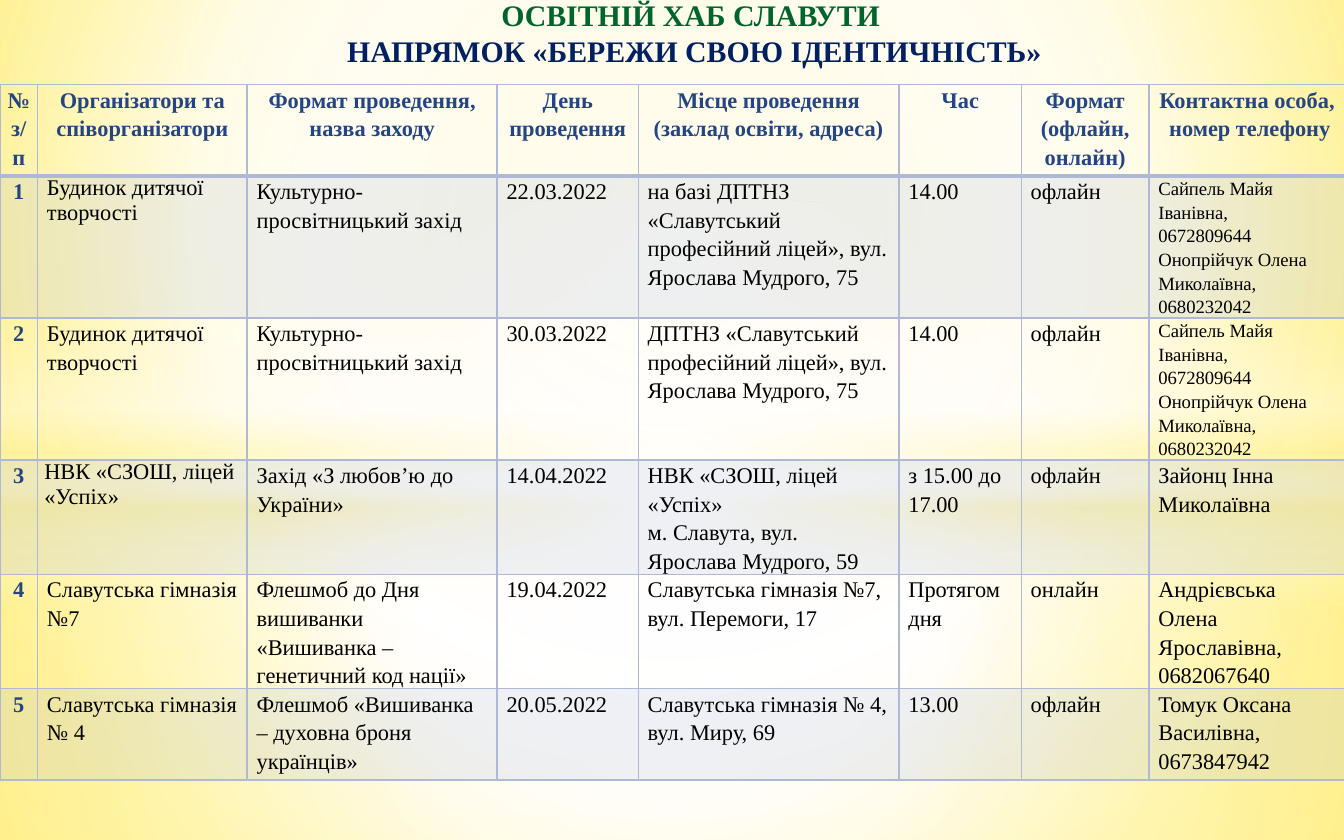
from dataclasses import dataclass
from typing import Any

from lxml.etree import SubElement
from pptx import Presentation
from pptx.dml.color import RGBColor
from pptx.enum.shapes import MSO_SHAPE
from pptx.enum.text import MSO_ANCHOR, MSO_AUTO_SIZE, PP_ALIGN
from pptx.oxml.ns import qn
from pptx.util import Inches, Pt


@dataclass(frozen=True)
class Theme:
    font: str = "Times New Roman"
    green: str = "00642D"
    navy: str = "002060"
    blue: str = "244583"
    black: str = "000000"
    line: str = "AEBAD5"
    white: str = "FFFFFF"
    cream: str = "FFF39D"
    head: int = 16
    text: int = 12
    small: int = 10


THEME = Theme()


@dataclass(frozen=True)
class Stop:
    at: int
    tone: str
    alpha: int = 100


@dataclass(frozen=True)
class Glow:
    kind: Any
    top: float
    height: float
    stops: tuple
    focus: tuple = (50, 50, 50, 50)


@dataclass(frozen=True)
class Look:
    size: int = THEME.text
    tone: str = THEME.black
    bold: bool = False
    align: Any = PP_ALIGN.LEFT
    inset: float = 0.07
    space: float = 1.15


HEAD = Look(tone=THEME.blue, bold=True, align=PP_ALIGN.CENTER, inset=0.05)
BODY = Look()
TIGHT = Look(space=1.0)
NARROW = Look(space=1.0, inset=0.05)
SMALL = Look(size=THEME.small)
SPECIAL = {(1, 1): TIGHT, (3, 1): NARROW, (1, 7): SMALL, (2, 7): SMALL}

BACK = (Stop(0, "FFF18D"), Stop(60, THEME.white), Stop(100, "FFE94E"))
GLOWS = (
    Glow(MSO_SHAPE.RECTANGLE, 3.52, 2.73, (
        Stop(0, THEME.white, 91), Stop(37, THEME.white, 76), Stop(100, THEME.cream, 79))),
    Glow(MSO_SHAPE.RECTANGLE, 0, 3.52, (
        Stop(0, THEME.white, 89), Stop(48, THEME.white, 62), Stop(100, THEME.cream, 79))),
    Glow(MSO_SHAPE.RECTANGLE, 2.42, 2.08, (
        Stop(0, THEME.white, 0), Stop(29, THEME.white, 30), Stop(45, THEME.cream, 40),
        Stop(55, THEME.white, 26), Stop(65, THEME.cream, 60), Stop(100, THEME.white, 0)), ()),
    Glow(MSO_SHAPE.OVAL, 1.46, 4.65, (Stop(0, THEME.white), Stop(54, THEME.white, 0))),
)

WIDTHS = (0.28, 1.56, 1.86, 1.05, 1.94, 0.91, 0.95, 1.46)
CLUB = "Будинок дитячої творчості"
EVENT = "Культурно-просвітницький захід"
HOSTS = "Сайпель Майя Іванівна,\n0672809644 Онопрійчук Олена Миколаївна,\n0680232042"
ROWS = (
    ("№\nз/п", "Організатори та співорганізатори", "Формат проведення, назва заходу",
     "День проведення", "Місце проведення\n(заклад освіти, адреса)", "Час",
     "Формат\n(офлайн, онлайн)", "Контактна особа,\n номер телефону"),
    ("1", CLUB, EVENT, "22.03.2022",
     "на базі ДПТНЗ «Славутський професійний ліцей», вул. Ярослава Мудрого, 75",
     "14.00", "офлайн", HOSTS),
    ("2", CLUB, EVENT, "30.03.2022",
     "ДПТНЗ «Славутський професійний ліцей», вул. Ярослава Мудрого, 75",
     "14.00", "офлайн", HOSTS),
    ("3", "НВК «СЗОШ, ліцей «Успіх»", "Захід «З любов’ю до України»", "14.04.2022",
     "НВК «СЗОШ, ліцей «Успіх»\nм. Славута, вул. Ярослава Мудрого, 59",
     "з 15.00 до 17.00", "офлайн", "Зайонц Інна Миколаївна"),
    ("4", "Славутська гімназія №7",
     "Флешмоб до Дня вишиванки «Вишиванка – генетичний код нації»", "19.04.2022",
     "Славутська гімназія №7, вул. Перемоги, 17", "Протягом дня", "онлайн",
     "Андрієвська Олена Ярославівна, 0682067640"),
    ("5", "Славутська гімназія № 4", "Флешмоб «Вишиванка – духовна броня українців»",
     "20.05.2022", "Славутська гімназія № 4, вул. Миру, 69", "13.00", "офлайн",
     "Томук Оксана Василівна, 0673847942"),
)


def apply(item: Any, values: dict) -> None:
    """Set each named value on the item."""
    for name, value in values.items():
        setattr(item, name, value)


def blend(box: Any, stops: tuple, focus: tuple) -> None:
    """Swap the solid fill in a box for a gradient, linear if it has no focus."""
    old = box.find(qn("a:solidFill"))
    grad = old.makeelement(qn("a:gradFill"), {"rotWithShape": "1"})
    box.replace(old, grad)
    group = SubElement(grad, qn("a:gsLst"))
    for stop in stops:
        mark = SubElement(group, qn("a:gs"), pos=str(stop.at * 1000))
        tone = SubElement(mark, qn("a:srgbClr"), val=stop.tone)
        SubElement(tone, qn("a:alpha"), val=str(stop.alpha * 1000))
    if focus:
        way = SubElement(grad, qn("a:path"), path="circle")
        sides = {side: str(part * 1000) for side, part in zip("ltrb", focus)}
        SubElement(way, qn("a:fillToRect"), sides)
    else:
        SubElement(grad, qn("a:lin"), ang="5400000", scaled="0")


def paint(slide: Any, glow: Glow) -> None:
    """Draw one glow across the slide."""
    shape = slide.shapes.add_shape(
        glow.kind, 0, Inches(glow.top), Inches(10), Inches(glow.height))
    shape.shadow.inherit = False
    shape.line.fill.background()
    shape.fill.solid()
    blend(shape.element.spPr, glow.stops, glow.focus)


def format_font(font: Any, size: int, tone: str, bold: bool) -> None:
    """Set the face, size, weight and colour of a font."""
    apply(font, {"name": THEME.font, "size": Pt(size), "bold": bold})
    font.color.rgb = RGBColor.from_string(tone)


def edge(cell: Any, row: int) -> None:
    """Rule the four sides of a cell, thicker under the header."""
    props = cell._tc.get_or_add_tcPr()
    for side in "LRTB":
        thick = (row, side) in ((0, "B"), (1, "T"))
        rule = SubElement(props, qn(f"a:ln{side}"), w=str(Pt(2 if thick else 1)))
        fill = SubElement(rule, qn("a:solidFill"))
        SubElement(fill, qn("a:srgbClr"), val=THEME.line)


def tint(cell: Any, row: int) -> None:
    """Shade the odd rows and leave the rest clear."""
    if row % 2 == 0:
        cell.fill.background()
        return
    cell.fill.solid()
    cell.fill.fore_color.rgb = RGBColor.from_string(THEME.line)
    tone = cell._tc.tcPr.find(qn("a:solidFill"))[0]
    SubElement(tone, qn("a:alpha"), val="20000")


def write(cell: Any, text: str, look: Look) -> None:
    """Fill a cell with text in the given look."""
    side = Inches(look.inset)
    apply(cell, {"text": text, "margin_left": side, "margin_right": side,
                 "margin_top": 0, "margin_bottom": 0})
    for para in cell.text_frame.paragraphs:
        apply(para, {"alignment": look.align, "line_spacing": look.space})
        for run in para.runs:
            format_font(run.font, look.size, look.tone, look.bold)


def add_plan(slide: Any) -> None:
    """Build the table of events."""
    frame = slide.shapes.add_table(len(ROWS), len(WIDTHS), 0, Inches(0.63),
                                   Inches(10), Inches(0.68 * len(ROWS)))
    table = frame.table
    apply(table, {"first_row": False, "horz_banding": False})
    for col, width in zip(table.columns, WIDTHS):
        col.width = Inches(width)
    for row, texts in enumerate(ROWS):
        for col, text in enumerate(texts):
            cell = table.cell(row, col)
            base = HEAD if row == 0 or col == 0 else BODY
            write(cell, text, SPECIAL.get((row, col), base))
            edge(cell, row)
            tint(cell, row)


def add_title(slide: Any) -> None:
    """Set the two-line title on top of the other shapes."""
    title = slide.shapes.title
    apply(title, {"left": Inches(0.28), "top": Inches(-0.26),
                  "width": Inches(9.72), "height": Inches(0.84)})
    frame = title.text_frame
    frame.text = "ОСВІТНІЙ ХАБ СЛАВУТИ\n НАПРЯМОК «БЕРЕЖИ СВОЮ ІДЕНТИЧНІСТЬ»"
    apply(frame, {"word_wrap": True, "auto_size": MSO_AUTO_SIZE.NONE, "margin_top": 0,
                  "margin_bottom": Inches(0.07), "vertical_anchor": MSO_ANCHOR.BOTTOM})
    for para, tone in zip(frame.paragraphs, (THEME.green, THEME.navy)):
        para.alignment = PP_ALIGN.CENTER
        format_font(para.runs[0].font, THEME.head, tone, True)
    title.element.getparent().append(title.element)


def main() -> None:
    """Build and save the slide."""
    deck = Presentation()
    apply(deck, {"slide_width": Inches(10), "slide_height": Inches(6.25)})
    slide = deck.slides.add_slide(deck.slide_layouts[5])
    slide.background.fill.solid()
    blend(slide.element.cSld.find(qn("p:bg"))[0], BACK, (20, 10, 20, 60))
    for glow in GLOWS:
        paint(slide, glow)
    add_plan(slide)
    add_title(slide)
    deck.save("out.pptx")


if __name__ == "__main__":
    main()
